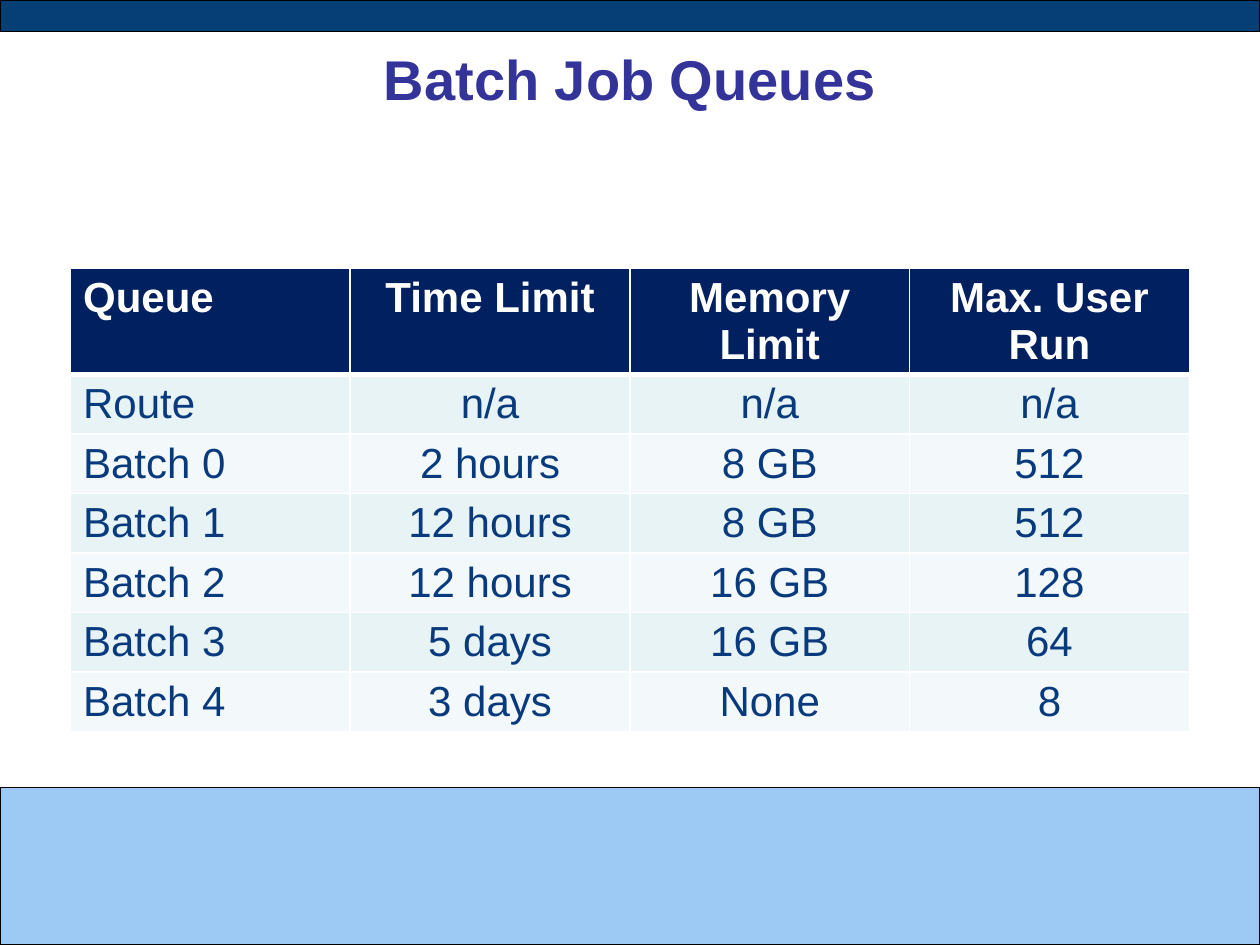
import pptx
import pptx.dml.color
import pptx.enum.shapes
import pptx.enum.text
import pptx.oxml
import pptx.oxml.ns
import pptx.util
from pptx.dml.color import RGBColor
from pptx.util import Inches

WHITE = RGBColor(0xFF, 0xFF, 0xFF)
BLACK = RGBColor(0x00, 0x00, 0x00)
SKY = RGBColor(0x9C, 0xCA, 0xF4)
DEEP_BLUE = RGBColor(0x05, 0x3F, 0x75)
INDIGO = RGBColor(0x33, 0x33, 0x99)
NAVY = RGBColor(0x00, 0x20, 0x60)
TEXT_BLUE = RGBColor(0x08, 0x3A, 0x7D)
ROW_TINTS = (RGBColor(0xE7, 0xF3, 0xF4), RGBColor(0xF3, 0xF9, 0xFA))

QUEUES = (
    ("Queue", "Time Limit", "Memory Limit", "Max. User Run"),
    ("Route", "n/a", "n/a", "n/a"),
    ("Batch 0", "2 hours", "8 GB", "512"),
    ("Batch 1", "12 hours", "8 GB", "512"),
    ("Batch 2", "12 hours", "16 GB", "128"),
    ("Batch 3", "5 days", "16 GB", "64"),
    ("Batch 4", "3 days", "None", "8"),
)


class SlideBuilder:
    """Draw styled elements on the current slide."""

    font_name = "Arial"

    def __init__(self, slide):
        self.slide = slide

    def style(self, paragraph, size, color, bold, centered):
        align = pptx.enum.text.PP_ALIGN
        paragraph.alignment = align.CENTER if centered else align.LEFT
        for run in paragraph.runs:
            run.font.name = self.font_name
            run.font.size = pptx.util.Pt(size)
            run.font.color.rgb = color
            run.font.bold = bold

    def band(self, top, height, color):
        band = self.slide.shapes.add_shape(
            pptx.enum.shapes.MSO_SHAPE.RECTANGLE,
            Inches(0), Inches(top), Inches(10), Inches(height))
        band.shadow.inherit = False
        band.fill.solid()
        band.fill.fore_color.rgb = color
        band.line.color.rgb = BLACK
        band.line.width = pptx.util.Pt(0.75)

    def title(self, wording):
        title = self.slide.shapes.title
        title.left, title.top = Inches(0.5), Inches(0.3)
        title.width, title.height = Inches(9), Inches(0.95)
        title.text_frame.text = wording
        title.text_frame.vertical_anchor = pptx.enum.text.MSO_ANCHOR.TOP
        self.style(title.text_frame.paragraphs[0], 32, INDIGO, True, True)

    def border(self, cell, side, points):
        properties = cell._tc.get_or_add_tcPr()
        properties.append(pptx.oxml.parse_xml(
            f'<a:ln{side} {pptx.oxml.ns.nsdecls("a")} w="{pptx.util.Pt(points)}">'
            f'<a:solidFill><a:srgbClr val="{WHITE}"/></a:solidFill></a:ln{side}>'))

    def table(self, rows, left, top, column_width, row_height):
        column_count = len(rows[0])
        table = self.slide.shapes.add_table(
            len(rows), column_count, Inches(left), Inches(top),
            Inches(column_width * column_count),
            Inches(row_height * len(rows))).table
        for row_index, row in enumerate(rows):
            header = row_index == 0
            fill = NAVY if header else ROW_TINTS[(row_index - 1) % 2]
            for column_index, wording in enumerate(row):
                cell = table.cell(row_index, column_index)
                cell.text_frame.text = wording
                self.style(cell.text_frame.paragraphs[0], 24,
                           WHITE if header else TEXT_BLUE,
                           header, column_index > 0)
                for side in "LRTB":
                    under_header = (row_index, side) in ((0, "B"), (1, "T"))
                    self.border(cell, side, 3 if under_header else 1)
                cell.fill.solid()
                cell.fill.fore_color.rgb = fill


def main():
    deck = pptx.Presentation()
    deck.slide_width, deck.slide_height = Inches(10), Inches(7.5)
    builder = SlideBuilder(deck.slides.add_slide(deck.slide_layouts[5]))
    builder.band(6.25, 1.25, SKY)
    builder.band(0, 0.25, DEEP_BLUE)
    builder.title("Batch Job Queues")
    builder.table(QUEUES, 0.56, 2.13, 2.22, 0.41)
    deck.save("out.pptx")


if __name__ == "__main__":
    main()
